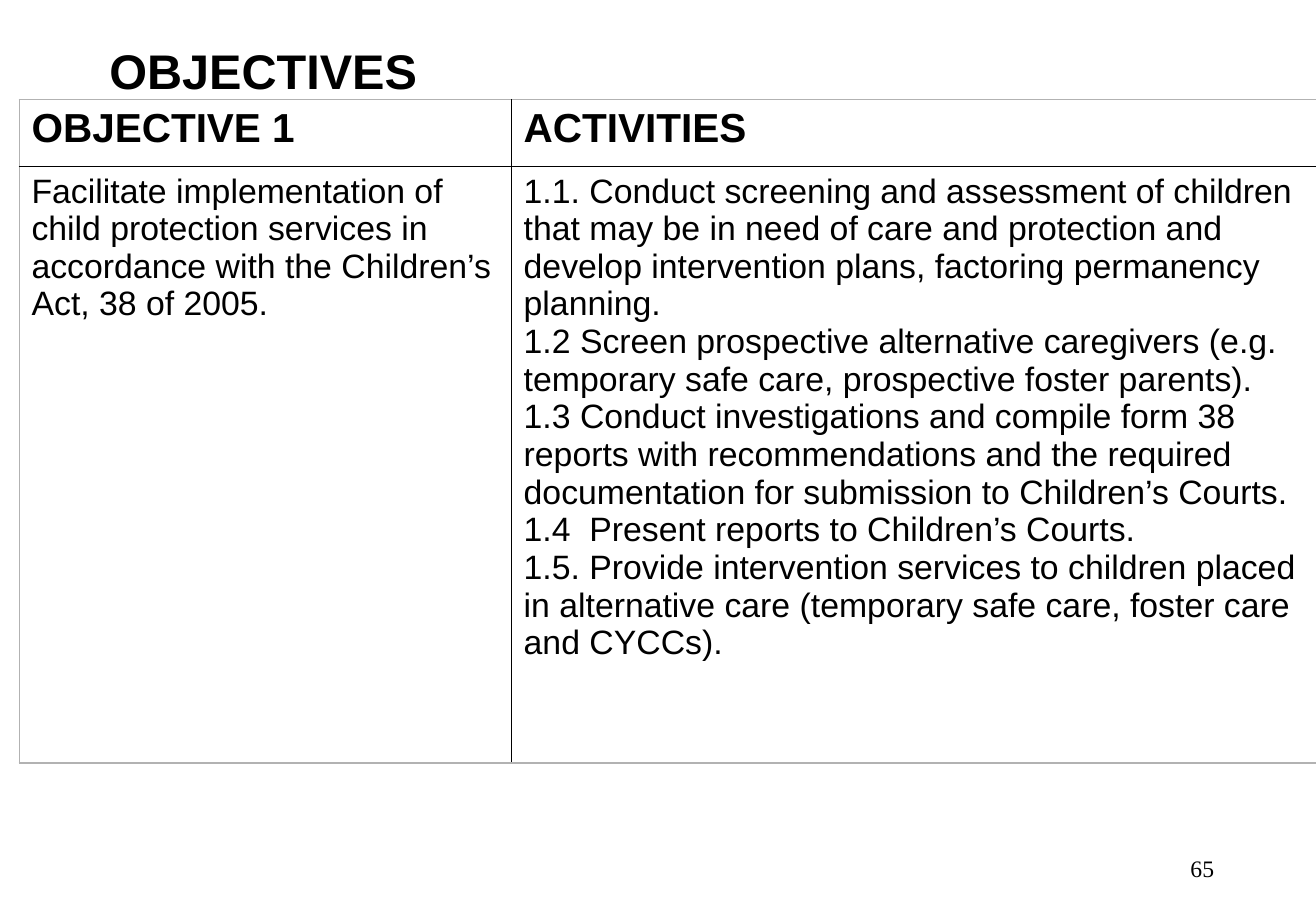
import pptx
import pptx.util
import pptx.dml.color
import pptx.enum.text
import pptx.oxml
import pptx.oxml.ns
from pptx.util import Inches

# Content
TITLE = "OBJECTIVES"
PAGE_NUMBER = "65"
HEADINGS = ["OBJECTIVE 1", "ACTIVITIES"]
OBJECTIVE = [
    "Facilitate implementation of child protection services in accordance with the Children’s Act, 38 of 2005.",
]
ACTIVITIES = [
    "1.1. Conduct screening and assessment of children that may be in need of care and protection "
    "and develop intervention plans, factoring permanency planning.",
    "1.2 Screen prospective alternative caregivers (e.g. temporary safe care, prospective foster parents).",
    "1.3 Conduct investigations and compile form 38 reports with recommendations and the required "
    "documentation for submission to Children’s Courts.",
    "1.4  Present reports to Children’s Courts.",
    "1.5. Provide intervention services to children placed in alternative care "
    "(temporary safe care, foster care and CYCCs).",
]
ROWS = [[[heading] for heading in HEADINGS], [OBJECTIVE, ACTIVITIES]]
COL_WIDTHS = [4.05, 6.63]
ROW_HEIGHTS = [0.55, 4.91]


class Theme:
    text = "000000"
    background = "FFFFFF"
    inner_line = "000000"
    outer_line = "B2B2B2"
    line_width = 1
    font = "Arial"
    number_font = "Times New Roman"
    title_size = 28.8
    heading_size = 24
    body_size = 20
    number_size = 14


def rgb(color):
    return pptx.dml.color.RGBColor.from_string(color)


def write(tf, lines, size, font=Theme.font, bold=False, align=None):
    tf.word_wrap = True
    for i, line in enumerate(lines):
        p = tf.paragraphs[0] if i == 0 else tf.add_paragraph()
        p.text = line
        p.alignment = align
        p.font.name = font
        p.font.size = pptx.util.Pt(size)
        p.font.bold = bold
        p.font.color.rgb = rgb(Theme.text)


def set_borders(cell, sides):
    tc_pr = cell._tc.get_or_add_tcPr()
    for i, (side, color) in enumerate(sides.items()):
        line = pptx.oxml.parse_xml(
            f'<a:{side} {pptx.oxml.ns.nsdecls("a")} w="{pptx.util.Pt(Theme.line_width)}">'
            f'<a:solidFill><a:srgbClr val="{color}"/></a:solidFill></a:{side}>')
        tc_pr.insert(i, line)


prs = pptx.Presentation()
prs.slide_width, prs.slide_height = Inches(10.83), Inches(7.5)
s = prs.slides.add_slide(prs.slide_layouts[6])

# Title
tf = s.shapes.add_textbox(Inches(0.42), Inches(0.08), Inches(9.25), Inches(0.74)).text_frame
tf.margin_left, tf.margin_top, tf.margin_bottom = Inches(0.48), Inches(0.26), 0
write(tf, [TITLE], Theme.title_size, bold=True)

# Page number
tf = s.shapes.add_textbox(Inches(7.65), Inches(6.95), Inches(2.44), Inches(0.4)).text_frame
tf.vertical_anchor = pptx.enum.text.MSO_ANCHOR.MIDDLE
write(tf, [PAGE_NUMBER], Theme.number_size, Theme.number_font,
      align=pptx.enum.text.PP_ALIGN.RIGHT)

# Objectives table
table = s.shapes.add_table(
    len(ROWS), len(COL_WIDTHS), Inches(0.16), Inches(0.82),
    Inches(sum(COL_WIDTHS)), Inches(sum(ROW_HEIGHTS))).table
table.horz_banding = False
for column, width in zip(table.columns, COL_WIDTHS):
    column.width = Inches(width)
for row, height in zip(table.rows, ROW_HEIGHTS):
    row.height = Inches(height)

last_row, last_col = len(ROWS) - 1, len(COL_WIDTHS) - 1
for r, row in enumerate(ROWS):
    for c, lines in enumerate(row):
        cell = table.cell(r, c)
        cell.fill.solid()
        cell.fill.fore_color.rgb = rgb(Theme.background)
        on_edge = {"lnL": c == 0, "lnR": c == last_col, "lnT": r == 0, "lnB": r == last_row}
        set_borders(cell, {side: Theme.outer_line if edge else Theme.inner_line
                           for side, edge in on_edge.items()})
        write(cell.text_frame, lines,
              Theme.heading_size if r == 0 else Theme.body_size, bold=r == 0)

prs.save("out.pptx")
